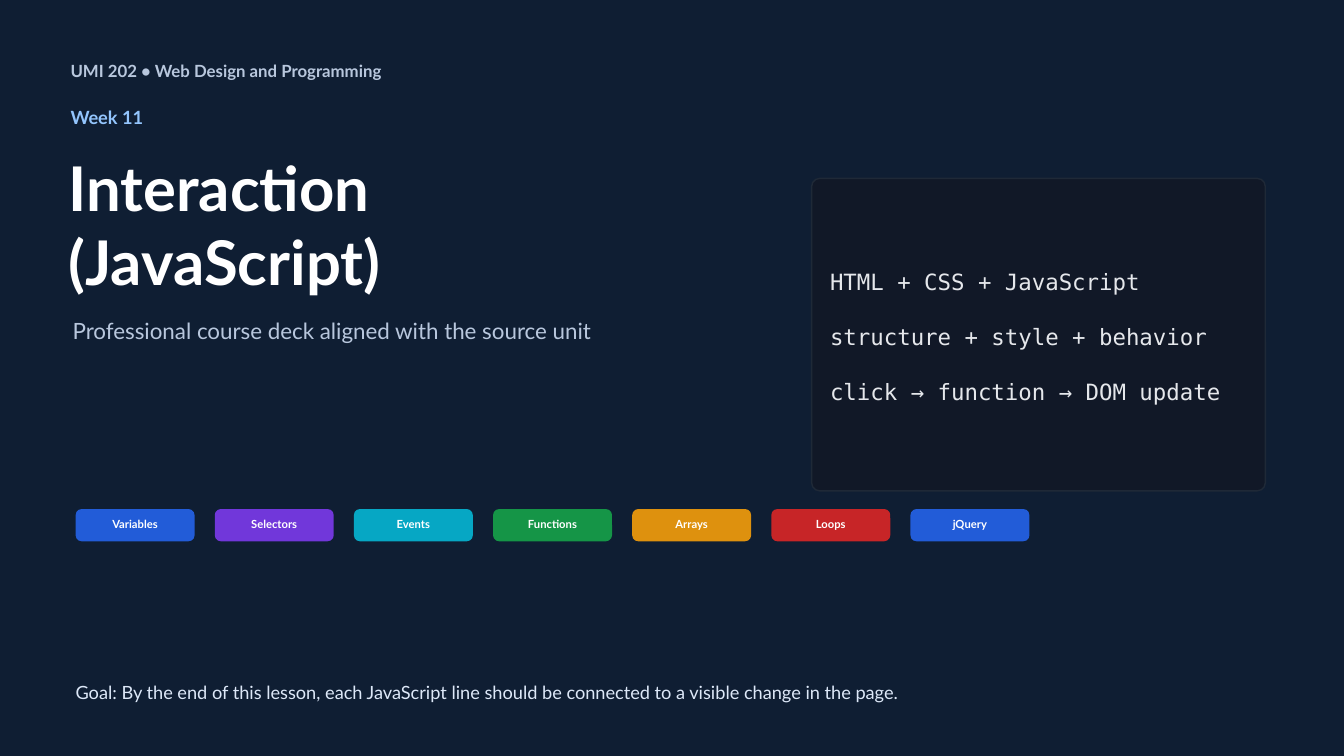
from dataclasses import dataclass

from lxml.etree import SubElement
from pptx import Presentation
from pptx.dml.color import RGBColor
from pptx.enum.shapes import MSO_SHAPE as Shape
from pptx.enum.text import MSO_ANCHOR as Anchor, MSO_AUTO_SIZE as AutoSize, PP_ALIGN as Align
from pptx.oxml.ns import qn
from pptx.util import Inches, Pt


@dataclass(frozen=True)
class Theme:
    sans: str = "Lato"
    mono: str = "DejaVu Sans Mono"
    night: str = "0F1E33"
    white: str = "FFFFFF"
    mist: str = "B8C7DD"
    sky: str = "93C5FD"
    ice: str = "DDE8F8"
    code_text: str = "E5E7EB"
    code_fill: str = "111827"
    code_edge: str = "1F2937"
    blue: str = "2563EB"
    violet: str = "7C3AED"
    cyan: str = "06B6D4"
    green: str = "16A34A"
    amber: str = "F59E0B"
    red: str = "DC2626"
    title_size: int = 44
    lead_size: int = 16
    note_size: int = 13
    course_size: int = 12
    chip_size: int = 8
    chip_opacity: int = 90


class CoverSlide:
    COLUMNS, ROWS = 133.3, 75

    def __init__(self, deck, theme):
        self.theme = theme
        self.column = deck.slide_width / self.COLUMNS
        self.row = deck.slide_height / self.ROWS
        self.slide = deck.slides.add_slide(deck.slide_layouts[0])
        backdrop = self.slide.background.fill
        backdrop.solid()
        backdrop.fore_color.rgb = RGBColor.from_string(theme.night)

    def place(self, left, top, width, height):
        return (round(left * self.column), round(top * self.row),
                round(width * self.column), round(height * self.row))

    def set_lines(self, frame, lines, size, color, bold=False, font=None,
                  align=Align.LEFT, gap=0, insets=(0, 0, 0, 0)):
        left, top, right, bottom = insets
        frame_format = {
            "word_wrap": True,
            "auto_size": AutoSize.NONE,
            "vertical_anchor": Anchor.MIDDLE,
            "margin_left": round(left * self.column),
            "margin_top": round(top * self.row),
            "margin_right": round(right * self.column),
            "margin_bottom": round(bottom * self.row),
        }
        for name, value in frame_format.items():
            setattr(frame, name, value)
        frame.text = "\n".join(lines)
        font_format = {"name": font or self.theme.sans, "size": Pt(size), "bold": bold}
        for index, paragraph in enumerate(frame.paragraphs):
            paragraph.alignment = align
            paragraph.space_before = Pt(gap if index else 0)
            for run in paragraph.runs:
                for name, value in font_format.items():
                    setattr(run.font, name, value)
                run.font.color.rgb = RGBColor.from_string(color)

    def placeholder(self, index, box, lines, size, color, **style):
        holder = self.slide.placeholders[index]
        for name, value in zip(("left", "top", "width", "height"), self.place(*box)):
            setattr(holder, name, value)
        self.set_lines(holder.text_frame, lines, size, color, **style)

    def text(self, box, line, size, color, **style):
        label = self.slide.shapes.add_textbox(*self.place(*box))
        self.set_lines(label.text_frame, [line], size, color, **style)

    def card(self, box, radius, fill, edge=None, opacity=100):
        card = self.slide.shapes.add_shape(Shape.ROUNDED_RECTANGLE, *self.place(*box))
        card.shadow.inherit = False
        card.adjustments[0] = radius / box[3]
        card.fill.solid()
        card.fill.fore_color.rgb = RGBColor.from_string(fill)
        if opacity < 100:
            color = card.element.spPr.find(qn("a:solidFill"))[0]
            SubElement(color, qn("a:alpha"), val=str(opacity * 1000))
        if edge:
            card.line.color.rgb = RGBColor.from_string(edge)
            card.line.width = Pt(1)
        else:
            card.line.fill.background()
        return card.text_frame

    def chips(self, topics, left, top, width, height, step):
        theme = self.theme
        for index, (topic, fill) in enumerate(topics):
            box = (left + index * step, top, width, height)
            chip = self.card(box, 0.6, fill, opacity=theme.chip_opacity)
            self.set_lines(chip, [topic], theme.chip_size, theme.white, bold=True,
                           align=Align.CENTER, insets=(0, 0, 0, 0.2))

    def code(self, box, lines):
        theme = self.theme
        panel = self.card(box, 0.8, theme.code_fill, edge=theme.code_edge)
        self.set_lines(panel, lines, theme.lead_size, theme.code_text, font=theme.mono,
                       gap=20, insets=(1.6, 1.6, 1.2, 1.2))


def main():
    deck = Presentation()
    deck.slide_width, deck.slide_height = Inches(13.33), Inches(7.5)
    theme = Theme()
    cover = CoverSlide(deck, theme)

    cover.text((7, 5.5, 64, 3), "UMI 202 • Web Design and Programming",
               theme.course_size, theme.mist, bold=True)
    cover.text((7, 10.2, 21, 2.8), "Week 11", theme.note_size, theme.sky, bold=True)
    cover.placeholder(0, (6.8, 15.5, 74, 13.5), ["Interaction", "(JavaScript)"],
                      theme.title_size, theme.white, bold=True)
    cover.placeholder(1, (7.2, 31, 69, 3.5),
                      ["Professional course deck aligned with the source unit"],
                      theme.lead_size, theme.mist)

    topics = [
        ("Variables", theme.blue),
        ("Selectors", theme.violet),
        ("Events", theme.cyan),
        ("Functions", theme.green),
        ("Arrays", theme.amber),
        ("Loops", theme.red),
        ("jQuery", theme.blue),
    ]
    cover.chips(topics, left=7.5, top=50.5, width=11.8, height=3.2, step=13.8)
    cover.code((80.5, 17.7, 45, 31), [
        "HTML + CSS + JavaScript",
        "structure + style + behavior",
        "click → function → DOM update",
    ])
    cover.text((7.5, 67, 113, 3.3),
               "Goal: By the end of this lesson, each JavaScript line should be "
               "connected to a visible change in the page.",
               theme.note_size, theme.ice)
    deck.save("out.pptx")


if __name__ == "__main__":
    main()
